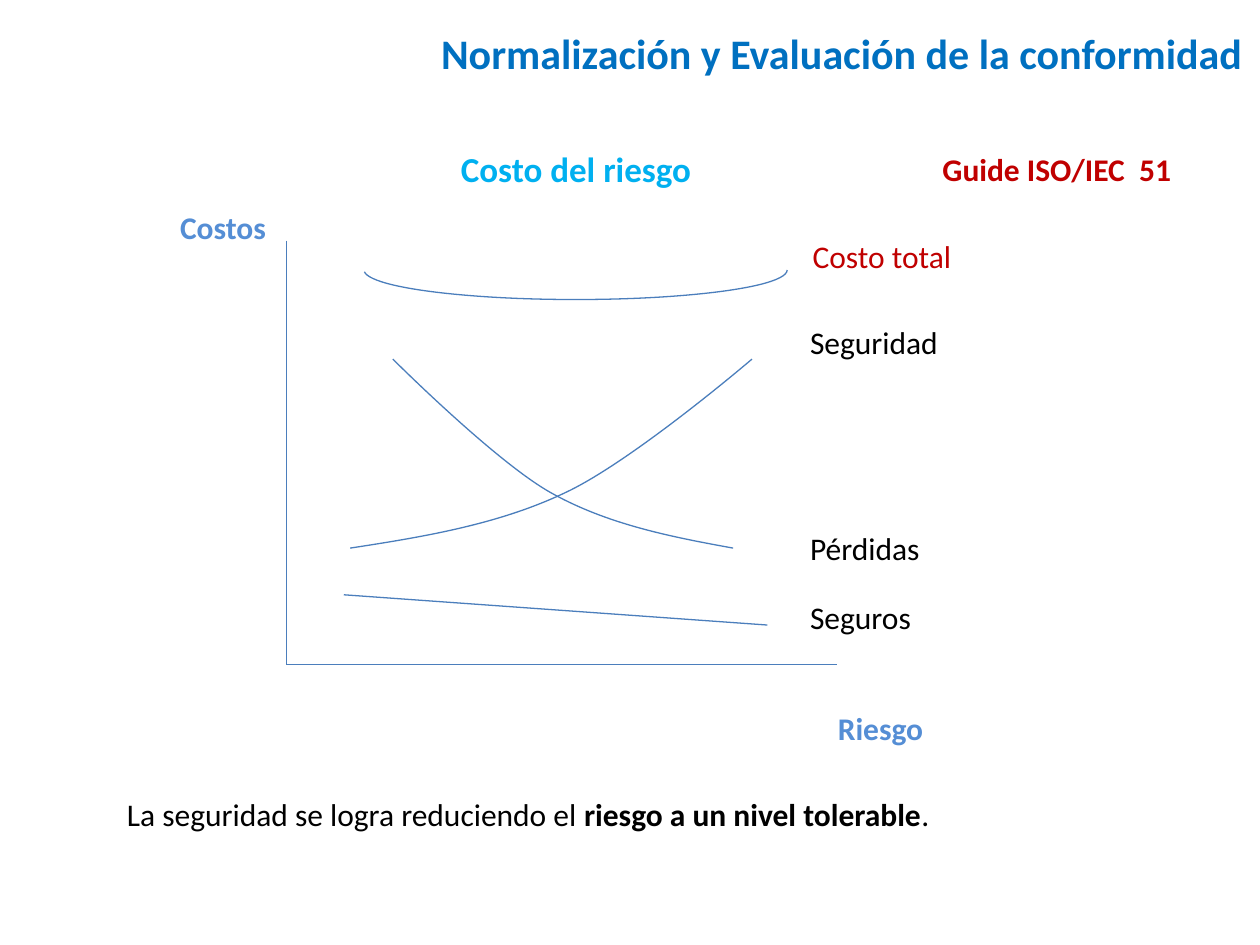
from lxml import etree
from pptx import Presentation
from pptx.dml.color import RGBColor
from pptx.enum.shapes import MSO_CONNECTOR, MSO_SHAPE
from pptx.enum.text import MSO_ANCHOR, MSO_AUTO_SIZE, PP_ALIGN
from pptx.oxml.ns import qn
from pptx.util import Cm, Pt

BLACK = RGBColor(0x00, 0x00, 0x00)
RED = RGBColor(0xC0, 0x00, 0x00)
TITLE_BLUE = RGBColor(0x00, 0x70, 0xC0)
SKY_BLUE = RGBColor(0x00, 0xB0, 0xF0)
AXIS_BLUE = RGBColor(0x55, 0x8E, 0xD5)
LINE_BLUE = RGBColor(0x4B, 0x7E, 0xBC)


class RiskPage:
    font_name = "Calibri"
    line_width = Pt(0.75)

    def __init__(self, page):
        self.page = page

    def style_line(self, shape):
        shape.line.color.rgb = LINE_BLUE
        shape.line.width = self.line_width

    def fill_text(self, box, spans, color, size=18, wrap=False, align=PP_ALIGN.LEFT):
        """Fill a box with one paragraph of (text, bold) spans."""
        frame = box.text_frame
        settings = {"word_wrap": wrap, "auto_size": MSO_AUTO_SIZE.SHAPE_TO_FIT_TEXT,
                    "vertical_anchor": MSO_ANCHOR.TOP}
        for name, value in settings.items():
            setattr(frame, name, value)
        para = frame.paragraphs[0]
        para.alignment = align
        for text, bold in spans:
            span = para.add_run()
            span.text = text
            span.font.color.rgb = color
            formats = {"name": self.font_name, "size": Pt(size), "bold": bold}
            for name, value in formats.items():
                setattr(span.font, name, value)

    def title(self, text, left, top, width, height):
        box = self.page.shapes.title
        place = {"left": left, "top": top, "width": width, "height": height}
        for name, value in place.items():
            setattr(box, name, Cm(value))
        self.fill_text(box, [(text, True)], TITLE_BLUE, 24, True, PP_ALIGN.RIGHT)

    def text(self, spans, left, top, width, height=1.02, **style):
        box = self.page.shapes.add_textbox(Cm(left), Cm(top), Cm(width), Cm(height))
        self.fill_text(box, spans, **style)

    def line(self, *ends):
        line = self.page.shapes.add_connector(
            MSO_CONNECTOR.STRAIGHT, *(Cm(value) for value in ends))
        self.style_line(line)
        etree.SubElement(line._element.spPr, qn("a:effectLst"))

    def arc(self, left, top, width, height):
        """Draw the lower half of an ellipse."""
        arc = self.page.shapes.add_shape(
            MSO_SHAPE.ARC, Cm(left), Cm(top), Cm(width), Cm(height))
        arc.adjustments[0] = 108.29
        arc.adjustments[1] = 0
        arc._element.spPr.find(qn("a:xfrm")).set("flipV", "1")
        arc.fill.background()
        arc.shadow.inherit = False
        self.style_line(arc)

    def curve(self, start, *controls):
        """Draw cubic curves; every three control points make one."""
        builder = self.page.shapes.build_freeform(Cm(start[0]), Cm(start[1]))
        builder.add_line_segments([(Cm(x), Cm(y)) for x, y in controls], close=False)
        curve = builder.convert_to_shape()
        curve.fill.background()
        curve.shadow.inherit = False
        self.style_line(curve)
        steps = list(curve._element.iter(qn("a:lnTo")))
        for first in range(0, len(steps), 3):
            bezier = etree.Element(qn("a:cubicBezTo"))
            steps[first].addprevious(bezier)
            for step in steps[first:first + 3]:
                bezier.append(step[0])
                step.getparent().remove(step)


def main():
    deck = Presentation()
    deck.slide_width, deck.slide_height = Cm(25.4), Cm(19.05)
    risk = RiskPage(deck.slides.add_slide(deck.slide_layouts[5]))

    # Headings
    risk.title("Normalización y Evaluación de la conformidad", 8.31, 0.43, 16.99, 1.27)
    risk.text([("Costo del riesgo", True)], 9.04, 2.84, 5.21, 1.12,
              color=SKY_BLUE, size=20)
    risk.text([("Guide ISO/IEC  51", True)], 18.75, 2.9, 5.16, color=RED)

    # Axes
    origin_x, origin_y = 5.77, 13.39
    risk.line(origin_x, 4.85, origin_x, origin_y)
    risk.line(origin_x, origin_y, 16.87, origin_y)
    risk.text([("Costos", True)], 3.38, 4.06, 2.26, color=AXIS_BLUE)
    risk.text([("Riesgo", True)], 16.64, 14.17, 2.24, color=AXIS_BLUE)

    # Cost curves: total, insurance, safety, losses
    risk.arc(7.34, 4.85, 8.53, 1.19)
    risk.line(6.93, 11.99, 15.47, 12.6)
    risk.curve((7.06, 11.05), (8.56, 10.82), (10.06, 10.57), (11.4, 9.93),
               (12.75, 9.3), (15.16, 7.24), (15.16, 7.24))
    risk.curve((14.78, 11.05), (13.51, 10.82), (12.24, 10.57), (11.1, 9.93),
               (9.98, 9.3), (7.92, 7.24), (7.92, 7.24))

    # Curve labels
    for label, left, top, width, color in (
            ("Costo total", 16.13, 4.65, 3.33, RED),
            ("Seguridad", 16.08, 6.38, 3.12, BLACK),
            ("Pérdidas", 16.08, 10.54, 2.74, BLACK),
            ("Seguros", 16.08, 11.94, 2.57, BLACK)):
        risk.text([(label, False)], left, top, width, color=color)

    # Conclusion
    risk.text([("La seguridad se logra reduciendo el ", False),
               ("riesgo a un nivel tolerable", True), (".", False)],
              2.31, 15.9, 18.21, color=BLACK, wrap=True)

    deck.save("out.pptx")


if __name__ == "__main__":
    main()
